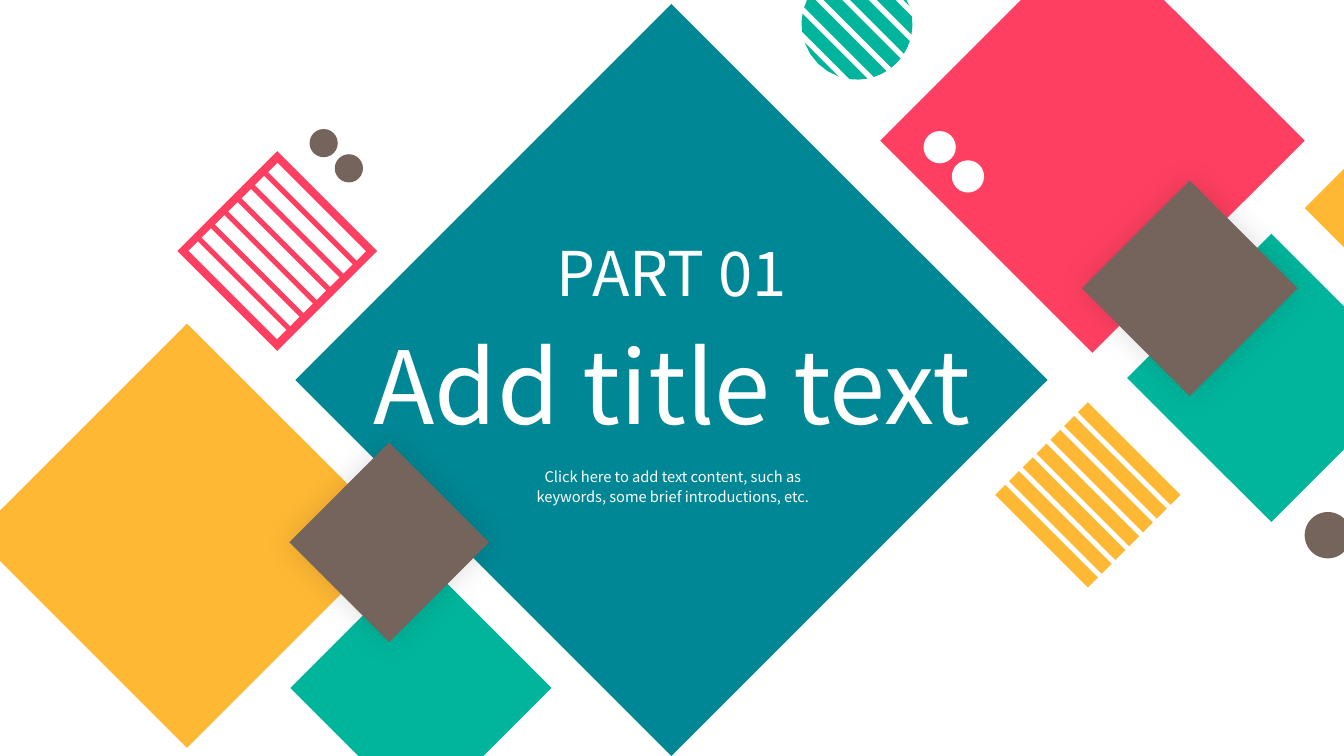
from math import acos, cos, pi, sin
from pptx import Presentation
from pptx.dml.color import RGBColor
from pptx.enum.shapes import MSO_SHAPE as Kind
from pptx.enum.text import MSO_AUTO_SIZE as Fit, PP_ALIGN as Align
from pptx.oxml import parse_xml
from pptx.oxml.ns import nsdecls
from pptx.util import Inches, Pt

theme = {
    "teal": RGBColor.from_string("008795"),
    "green": RGBColor.from_string("01B59C"),
    "gold": RGBColor.from_string("FEB834"),
    "pink": RGBColor.from_string("FE3F61"),
    "brown": RGBColor.from_string("75645C"),
    "white": RGBColor.from_string("FFFFFF"),
    "font": "Noto Sans CJK SC",
    "part": Pt(44),
    "title": Pt(72),
    "note": Pt(10.5),
}


def paint(shape, color):
    shape.shadow.inherit = False
    shape.fill.solid()
    shape.fill.fore_color.rgb = theme[color]
    shape.line.fill.background()
    return shape


def draw(home, kind, left, top, wide, high, color):
    box = [Inches(n) for n in (left, top, wide, high)]
    return paint(home.add_shape(kind, *box), color)


deck = Presentation()
deck.slide_width, deck.slide_height = Inches(13.33), Inches(7.5)
slide = deck.slides.add_slide(deck.slide_layouts[6])
shapes = slide.shapes

draw(shapes, Kind.DIAMOND, -0.25, 3.21, 4.21, 4.21, "gold")

frame = shapes.add_group_shape().shapes
draw(frame, Kind.DIAMOND, 1.76, 1.5, 1.98, 1.98, "pink")
for i in range(7):
    bar = draw(frame, Kind.RECTANGLE, 2.29 + 0.79 * i / 6, 2.26 - 0.78 * i / 6, 0.13, 1.24, "white")
    bar.rotation = 315

for left, top, size, color in (
    (2.88, 5.53, 2.59, "green"),
    (2.93, 0.04, 7.46, "teal"),
    (8.73, -0.71, 4.21, "pink"),
):
    draw(shapes, Kind.DIAMOND, left, top, size, size, color)

comb = shapes.add_group_shape().shapes
for i in range(7):
    shift = 0.82 * i / 6
    bar = draw(comb, Kind.RECTANGLE, 10.31 + shift, 4.67 - shift, 0.14, 1.3, "gold")
    bar.rotation = 315

draw(shapes, Kind.DIAMOND, 11.18, 2.32, 2.86, 2.86, "green")
draw(shapes, Kind.DIAMOND, 12.94, 0.77, 2.59, 2.59, "gold")

for left, top, size in ((2.87, 4.39, 1.98), (10.73, 1.79, 2.14)):
    gem = draw(shapes, Kind.DIAMOND, left, top, size, size, "brown")
    glow = gem._element.spPr.find("{http://schemas.openxmlformats.org/drawingml/2006/main}effectLst")
    glow.append(parse_xml(
        f'<a:outerShdw {nsdecls("a")} blurRad="{Pt(21)}" dist="0" dir="0" algn="ctr" rotWithShape="0">'
        '<a:srgbClr val="000000"><a:alpha val="13000"/></a:srgbClr></a:outerShdw>'
    ))

mid_x, mid_y, radius, pitch, half = 8.5, 0.24, 0.55, 0.56 / 3, 0.13 / 2
disc = None
for i in range(-3, 4):
    near = acos(min(1, (pitch * i + half) / radius))
    far = acos(max(-1, (pitch * i - half) / radius))
    arc = [near, (near + far) / 2, far]
    turns = arc + [-turn for turn in reversed(arc)]
    rim = list(dict.fromkeys(
        (Inches(mid_x + radius * cos(turn - pi / 4)), Inches(mid_y + radius * sin(turn - pi / 4)))
        for turn in turns
    ))
    if disc is None:
        disc = shapes.build_freeform(*rim[0])
    else:
        disc.move_to(*rim[0])
    disc.add_line_segments(rim[1:], close=True)
paint(disc.convert_to_shape(), "green")

draw(shapes, Kind.OVAL, 12.94, 5.08, 0.46, 0.46, "brown")
for size, color, spots in (
    (0.28, "brown", ((3.32, 1.53), (3.07, 1.28))),
    (0.32, "white", ((9.44, 1.59), (9.16, 1.3))),
):
    pair = shapes.add_group_shape().shapes
    for left, top in spots:
        draw(pair, Kind.OVAL, left, top, size, size, color)

for words, size, wrap, space, box in (
    ("PART 01", "part", False, None, (5.36, 2.28, 2.61, 0.84)),
    ("Add title text", "title", False, None, (3.42, 3.16, 6.49, 1.31)),
    ("Click here to add text content, such as keywords, some brief introductions, etc.",
     "note", True, 1.14, (5.14, 4.57, 3.07, 0.49)),
):
    text = shapes.add_textbox(*[Inches(n) for n in box]).text_frame
    line = text.paragraphs[0]
    run = line.add_run()
    run.font.color.rgb = theme["white"]
    for part, look in (
        (text, {"word_wrap": wrap, "auto_size": Fit.SHAPE_TO_FIT_TEXT}),
        (line, {"alignment": Align.CENTER, "line_spacing": space}),
        (run, {"text": words}),
        (run.font, {"name": theme["font"], "size": theme[size]}),
    ):
        for name, value in look.items():
            setattr(part, name, value)

deck.save("out.pptx")
